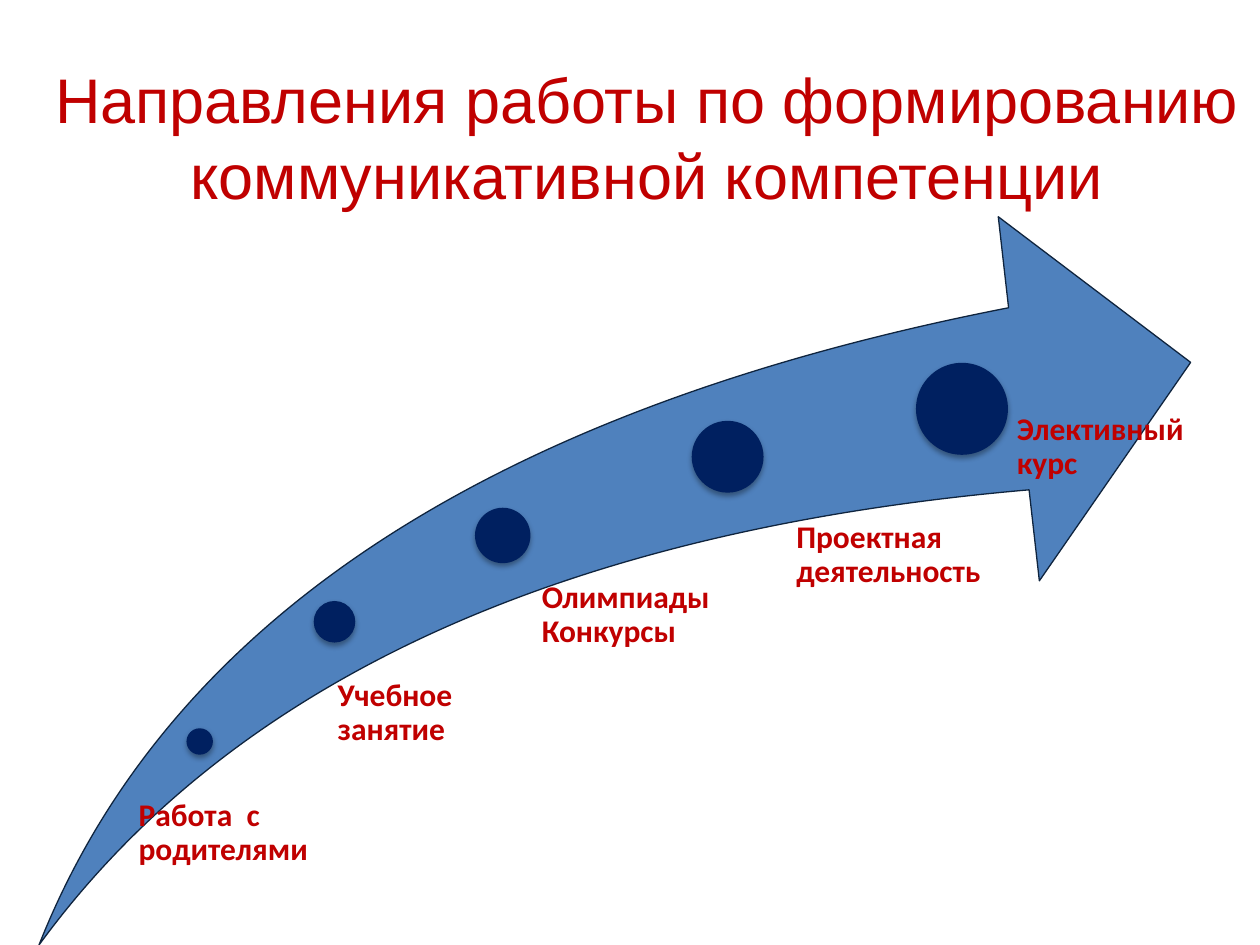
from dataclasses import dataclass

from lxml import etree
from pptx import Presentation
from pptx.dml.color import RGBColor
from pptx.enum.shapes import MSO_SHAPE
from pptx.enum.text import MSO_ANCHOR, PP_ALIGN
from pptx.oxml.ns import qn
from pptx.util import Inches, Pt


@dataclass(frozen=True)
class Theme:
    red: RGBColor = RGBColor.from_string("C00000")
    arrow: RGBColor = RGBColor.from_string("4F81BD")
    outline: RGBColor = RGBColor.from_string("0F243E")
    dot: RGBColor = RGBColor.from_string("002060")
    title_font: str = "Arial"
    label_font: str = "Calibri"
    title_size: Pt = Pt(36)
    label_size: Pt = Pt(18)


class SlideBuilder:
    def __init__(self, page, theme):
        self.page = page
        self.theme = theme

    def add_span(self, para, text, font, size, bold=False):
        span = para.add_run()
        span.text = text
        span.font.name = font
        span.font.size = size
        span.font.bold = bold
        span.font.color.rgb = self.theme.red

    def title(self, text, left, top, width, height):
        box = self.page.shapes.title
        box.left, box.top = Inches(left), Inches(top)
        box.width, box.height = Inches(width), Inches(height)
        frame = box.text_frame
        frame.vertical_anchor = MSO_ANCHOR.MIDDLE
        para = frame.paragraphs[0]
        para.alignment = PP_ALIGN.CENTER
        self.add_span(para, text, self.theme.title_font, self.theme.title_size)

    def shape(self, kind, left, top, width, height, color):
        shape = self.page.shapes.add_shape(
            kind, Inches(left), Inches(top), Inches(width), Inches(height))
        shape.shadow.inherit = False
        shape.fill.solid()
        shape.fill.fore_color.rgb = color
        return shape

    def arrow(self, left, top, width, height):
        arrow = self.shape(MSO_SHAPE.SWOOSH_ARROW, left, top, width, height,
                           self.theme.arrow)
        arrow.adjustments[0] = 0.25
        arrow.adjustments[1] = 0.25
        arrow.line.color.rgb = self.theme.outline
        arrow.line.width = Pt(0.75)

    def dot(self, left, top, size):
        dot = self.shape(MSO_SHAPE.OVAL, left, top, size, size, self.theme.dot)
        dot.line.fill.background()
        # Soft shadow straight below the dot
        effects = dot.element.spPr.find(qn("a:effectLst"))
        shadow = etree.SubElement(
            effects, qn("a:outerShdw"), blurRad=str(Pt(3.1)),
            dist=str(Pt(1.8)), dir="5400000", rotWithShape="0")
        color = etree.SubElement(shadow, qn("a:srgbClr"), val="000000")
        etree.SubElement(color, qn("a:alpha"), val="35000")

    def label(self, lines, left, top, width, height, inset):
        box = self.page.shapes.add_textbox(
            Inches(left), Inches(top), Inches(width), Inches(height))
        frame = box.text_frame
        frame.word_wrap = True
        frame.margin_left = Inches(inset)
        frame.margin_top = frame.margin_right = frame.margin_bottom = 0
        for index, line in enumerate(lines):
            para = frame.add_paragraph() if index else frame.paragraphs[0]
            para.line_spacing = 0.9
            self.add_span(para, line, self.theme.label_font,
                          self.theme.label_size, bold=True)


# Each step: dot (left, top, size), label lines, label (left, top, width, height, inset)
STEPS = [
    ((1.48, 5.78, 0.21), ["Работа  с родителями"], (0.99, 6.34, 1.73, 0.94, 0.11)),
    ((2.49, 4.77, 0.33), ["Учебное", "занятие"], (2.5, 5.39, 1.83, 2, 0.18)),
    ((3.77, 4.03, 0.44), ["Олимпиады", "Конкурсы"], (4.06, 4.61, 1.79, 0.81, 0.24)),
    ((5.49, 3.34, 0.57), ["Проектная", "деятельность"], (6.02, 4.14, 1.85, 0.66, 0.3)),
    ((7.27, 2.88, 0.73), ["Элективный курс"], (7.68, 3.28, 1.85, 0.74, 0.39)),
]


def main():
    deck = Presentation()
    deck.slide_width, deck.slide_height = Inches(10), Inches(7.5)
    page = deck.slides.add_slide(deck.slide_layouts[5])  # title only
    builder = SlideBuilder(page, Theme())

    # Heading
    builder.title("Направления работы по формированию коммуникативной компетенции",
                  0.27, 0.3, 9.73, 1.56)

    # Rising arrow with its steps
    builder.arrow(0.31, 1.72, 9.14, 5.78)
    for dot, lines, place in STEPS:
        builder.dot(*dot)
        builder.label(lines, *place)

    deck.save("out.pptx")


if __name__ == "__main__":
    main()
